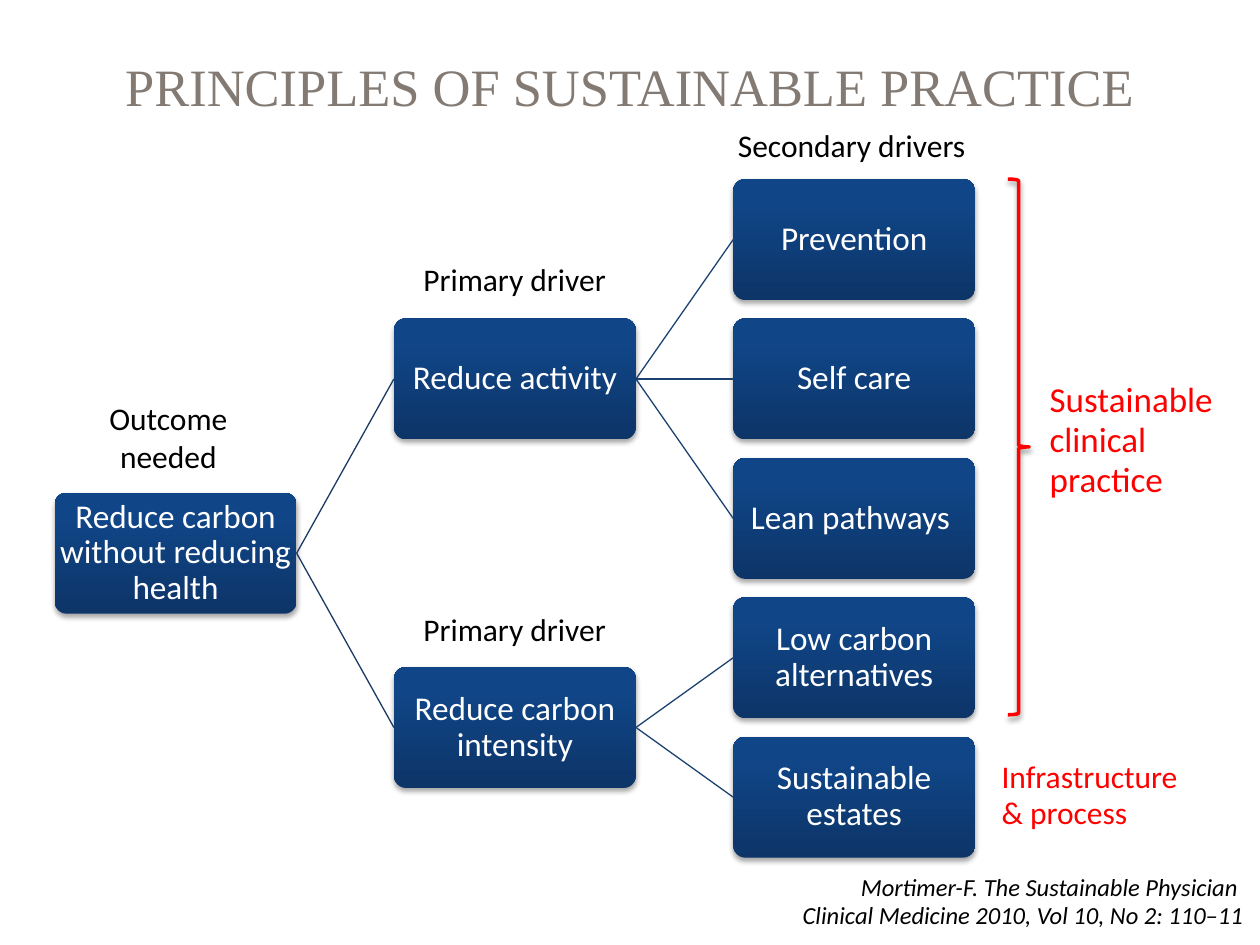
"""Build a driver diagram slide on the principles of sustainable practice."""
from lxml import etree
from pptx import Presentation
from pptx import util as u
from pptx.dml.color import RGBColor
from pptx.enum import shapes, text
from pptx.oxml.ns import qn

SANS, SERIF = "Calibri", "Times New Roman"
BLACK, WHITE, RED, TAUPE = "000000", "FFFFFF", "FF0000", "837A73"
LEFT, CENTRE, RIGHT = text.PP_ALIGN.LEFT, text.PP_ALIGN.CENTER, text.PP_ALIGN.RIGHT

COLUMNS = [1.1, 7.94, 14.78]
BOX_W, BOX_H = 4.88, 2.44
FIRST_TOP, ROW_PITCH = 3.61, 2.81

OUTCOME = "Reduce carbon without reducing health"
DRIVERS = {
    "Reduce activity": ["Prevention", "Self care", "Lean pathways "],
    "Reduce carbon intensity": ["Low carbon alternatives", "Sustainable estates"],
}


def rgb(hex_colour):
    """Turn a hex string into a colour."""
    return RGBColor.from_string(hex_colour)


def write(frame, lines, size, colour, font=SANS, italic=False, align=LEFT, spacing=None,
          inset=None):
    """Fill a text frame with one paragraph per line."""
    frame.word_wrap = True
    if inset is not None:
        frame.margin_left = frame.margin_right = u.Cm(inset)
        frame.margin_top = frame.margin_bottom = u.Cm(inset)
    for index, words in enumerate(lines):
        paragraph = frame.paragraphs[0] if index == 0 else frame.add_paragraph()
        paragraph.alignment = align
        paragraph.line_spacing = spacing
        run = paragraph.add_run()
        run.text = words
        run.font.name = font
        run.font.size = u.Pt(size)
        run.font.italic = italic
        run.font.color.rgb = rgb(colour)


def label(slide, place, lines, size, colour, **style):
    """Add a text box at (left, top, width, height) in centimetres."""
    frame = slide.shapes.add_textbox(*map(u.Cm, place)).text_frame
    write(frame, lines, size, colour, **style)


def drop_shadow(shape, alpha):
    """Give a shape a soft shadow falling straight down."""
    shape.shadow.inherit = False
    effects = shape._element.spPr.find(qn("a:effectLst"))
    shadow = etree.SubElement(effects, qn("a:outerShdw"), blurRad="39370", dist="22860",
                              dir="5400000", rotWithShape="0")
    black = etree.SubElement(shadow, qn("a:srgbClr"), val=BLACK)
    etree.SubElement(black, qn("a:alpha"), val=str(alpha * 1000))


def driver_box(slide, column, top, words):
    """Add one rounded box of the driver tree."""
    box = slide.shapes.add_shape(shapes.MSO_SHAPE.ROUNDED_RECTANGLE, u.Cm(COLUMNS[column]),
                                 u.Cm(top), u.Cm(BOX_W), u.Cm(BOX_H))
    box.adjustments[0] = 0.1
    box.fill.gradient()
    box.fill.gradient_angle = 90
    for stop, position, shade in zip(box.fill.gradient_stops, (0, 0.8), ("0D3568", "104587")):
        stop.position = position
        stop.color.rgb = rgb(shade)
    box.line.fill.background()
    drop_shadow(box, 35)
    box.text_frame.vertical_anchor = text.MSO_ANCHOR.MIDDLE
    write(box.text_frame, [words], 19, WHITE, align=CENTRE, spacing=0.9, inset=0)
    return box


def branch(slide, parent, child, colour):
    """Join the right side of a parent box to the left side of its child."""
    link = slide.shapes.add_connector(shapes.MSO_CONNECTOR.STRAIGHT, 0, 0, 0, 0)
    link.begin_connect(parent, 3)
    link.end_connect(child, 1)
    link.line.color.rgb = rgb(colour)
    link.line.width = u.Pt(0.75)
    etree.SubElement(link._element.spPr, qn("a:effectLst"))


def driver_tree(slide):
    """Lay out the tree, each parent centred on its first and last child."""
    primaries, row = [], 0
    for primary, secondaries in DRIVERS.items():
        tops = [FIRST_TOP + ROW_PITCH * (row + i) for i in range(len(secondaries))]
        row += len(secondaries)
        middle = (tops[0] + tops[-1]) / 2
        parent = driver_box(slide, 1, middle, primary)
        primaries.append((middle, parent))
        for top, secondary in zip(tops, secondaries):
            branch(slide, parent, driver_box(slide, 2, top, secondary), "1C4271")
    outcome_top = (primaries[0][0] + primaries[-1][0]) / 2
    outcome = driver_box(slide, 0, outcome_top, OUTCOME)
    for _, parent in primaries:
        branch(slide, outcome, parent, "193A64")


def headings(slide):
    """Name the levels of the tree."""
    for place, words in [
        ((1.07, 7.92, 4.65, 1.8), "Outcome needed"),
        ((14.2, 2.41, 5.94, 1.02), "Secondary drivers"),
        ((8.05, 5.11, 4.65, 1.02), "Primary driver"),
        ((8.05, 12.17, 4.65, 1.02), "Primary driver"),
    ]:
        label(slide, place, [words], 18, BLACK, align=CENTRE)


def groupings(slide):
    """Bracket the clinical drivers and name both groups in red."""
    brace = slide.shapes.add_shape(shapes.MSO_SHAPE.RIGHT_BRACE, u.Cm(20.32), u.Cm(FIRST_TOP),
                                   u.Cm(0.43), u.Cm(10.8))
    brace.fill.background()
    brace.line.color.rgb = rgb(RED)
    brace.line.width = u.Pt(2)
    drop_shadow(brace, 38)
    for place, words, size in [
        ((21.16, 7.67, 3.91, 2.44), "Sustainable clinical practice", 20),
        ((20.19, 15.32, 3.91, 1.47), "Infrastructure & process", 18),
    ]:
        label(slide, place, [words], size, RED, spacing=0.95, inset=0)


def main():
    """Build and save the slide."""
    deck = Presentation()
    deck.slide_width, deck.slide_height = u.Cm(25.4), u.Cm(19.05)
    slide = deck.slides.add_slide(deck.slide_layouts[6])
    label(slide, (1.27, 0.11, 22.86, 3.18), ["PRINCIPLES OF SUSTAINABLE PRACTICE"],
          30, TAUPE, font=SERIF, align=CENTRE, spacing=u.Pt(60))
    driver_tree(slide)
    headings(slide)
    groupings(slide)
    citation = ["Mortimer-F. The Sustainable Physician ",
                "Clinical Medicine 2010, Vol 10, No 2: 110–11"]
    label(slide, (14.78, 17.63, 10.29, 1.14), citation, 14, BLACK, italic=True,
          align=RIGHT, spacing=0.95, inset=0)
    deck.save("out.pptx")


if __name__ == "__main__":
    main()
